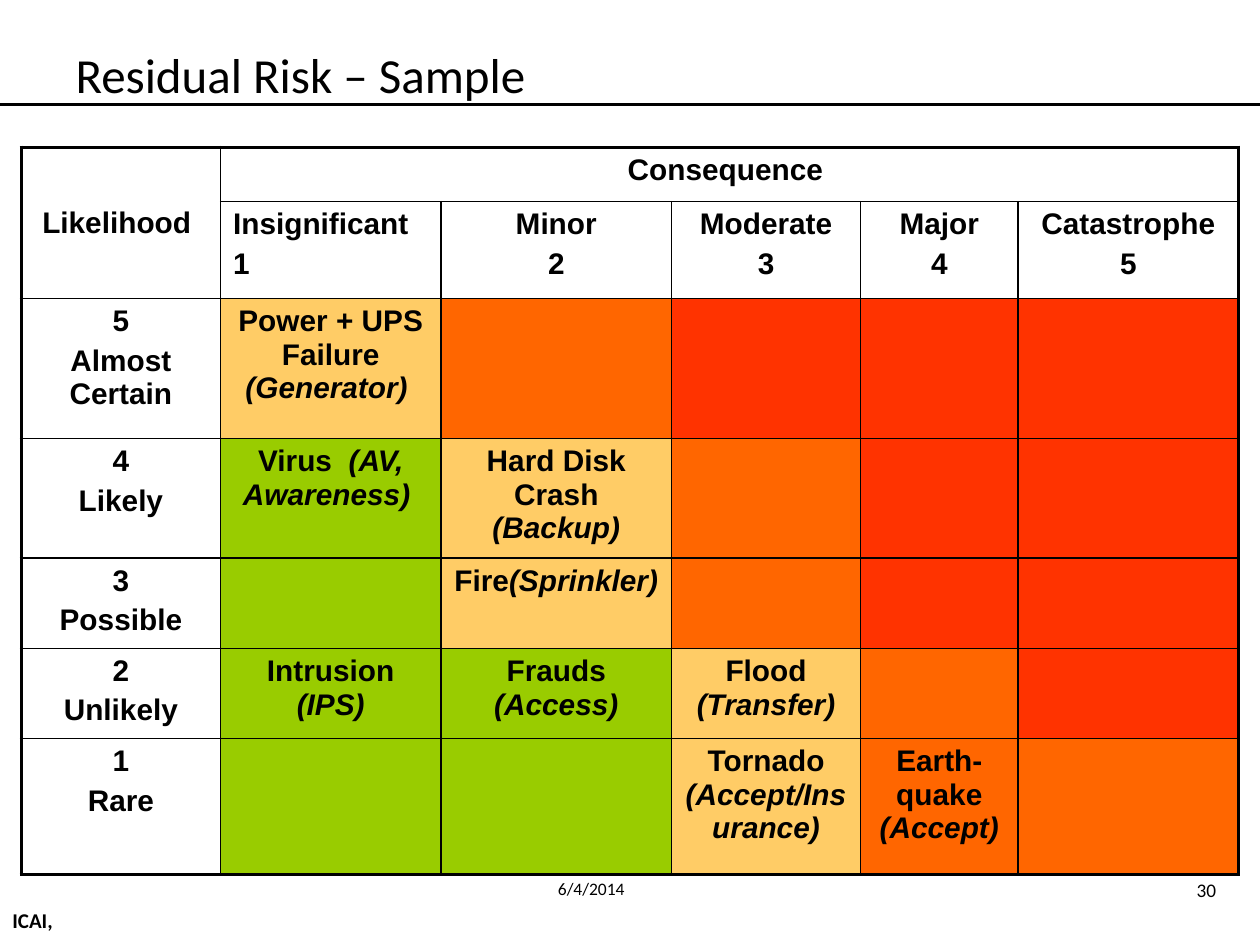
from lxml import etree
from pptx import Presentation
from pptx import util as u
from pptx.dml.color import RGBColor
from pptx.enum import shapes, text
from pptx.oxml import ns

ALIGN = text.PP_ALIGN
ANCHOR = text.MSO_ANCHOR
THEME = {
    "ink": "000000", "low": "99CC00", "medium": "FFCC66", "high": "FF6600", "extreme": "FF3300",
    "heading": "Calibri", "body": "Arial",
    "title": 28, "cell": 17, "number": 11, "date": 10, "footer": 12,
    "rule": 1.5, "inner": 1, "outer": 2.25, "gap": 3.4,
}

TITLE = "Residual Risk – Sample"
CORNER, AXIS = "Likelihood ", "Consequence "
CONSEQUENCES = ["Insignificant", "Minor", "Moderate", "Major", "Catastrophe"]
LIKELIHOODS = ["Almost Certain", "Likely", "Possible", "Unlikely", "Rare"]
LEVELS = ["MHEEE", "LMHEE", "LMHEE", "LLMHE", "LLMHH"]
LEVEL_COLOURS = {"L": "low", "M": "medium", "H": "high", "E": "extreme"}
RISKS = {
    (5, 1): ("Power + UPS Failure ", "(Generator) "),
    (4, 1): ("Virus  ", "(AV, Awareness) "),
    (4, 2): ("Hard Disk Crash ", "(Backup)"),
    (3, 2): ("Fire", "(Sprinkler)"),
    (2, 1): ("Intrusion ", "(IPS)"),
    (2, 2): ("Frauds ", "(Access)"),
    (2, 3): ("Flood ", "(Transfer)"),
    (1, 3): ("Tornado ", "(Accept/Insurance)"),
    (1, 4): ("Earth-quake ", "(Accept)"),
}
COLUMNS = [1.58, 1.75, 1.83, 1.5, 1.25, 1.75]
ROWS = [0.43, 0.77, 1.11, 0.7, 0.43, 0.43, 1.08]
LABELS = [
    ("30", (9, 6.92, 0.75, 0.28), "number", ALIGN.RIGHT, ANCHOR.TOP, False),
    ("ICAI,", (0, 7.1, 4.33, 0.4), "footer", ALIGN.LEFT, ANCHOR.MIDDLE, True),
    ("6/4/2014", (4.33, 6.92, 1.33, 0.33), "date", ALIGN.LEFT, ANCHOR.TOP, False),
]


def colour(name):
    return RGBColor.from_string(THEME[name])


def inches(values):
    return [u.Inches(value) for value in values]


def write(frame, paragraphs, size, font, align=ALIGN.LEFT, bold=False):
    for index, parts in enumerate(paragraphs):
        para = frame.paragraphs[0] if index == 0 else frame.add_paragraph()
        para.alignment = align
        if index:
            para.space_before = u.Pt(THEME["gap"])
        for position, words in enumerate(parts):
            span = para.add_run()
            span.text = words
            style = {"name": THEME[font], "size": u.Pt(THEME[size]), "bold": bold, "italic": position > 0}
            for key, value in style.items():
                setattr(span.font, key, value)
            span.font.color.rgb = colour("ink")


def border(cell, row, column):
    last_row, last_column = row + cell.span_height, column + cell.span_width
    if cell.is_spanned:
        last_row, last_column = row + 1, column + 1
    edges = {"lnL": column == 0, "lnR": last_column == len(COLUMNS),
             "lnT": row == 0, "lnB": last_row == len(ROWS)}
    properties = cell._tc.get_or_add_tcPr()
    for tag, outside in edges.items():
        width = u.Pt(THEME["outer" if outside else "inner"])
        line = etree.SubElement(properties, ns.qn("a:" + tag), w=str(int(width)))
        fill = etree.SubElement(line, ns.qn("a:solidFill"))
        etree.SubElement(fill, ns.qn("a:srgbClr"), val=THEME["ink"])


def cell_content():
    content = {(0, 0): [(CORNER,)], (0, 1): [(AXIS,)]}
    for number, name in enumerate(CONSEQUENCES, 1):
        content[1, number] = [(name,), (str(number),)]
    for index, name in enumerate(LIKELIHOODS):
        content[index + 2, 0] = [(str(5 - index),), (name,)]
    for (likelihood, consequence), parts in RISKS.items():
        content[7 - likelihood, consequence] = [parts]
    return content


def add_matrix(page):
    frame = page.shapes.add_table(len(ROWS), len(COLUMNS),
                                  *inches((0.17, 1.17, sum(COLUMNS), sum(ROWS))))
    table = frame.table
    table.first_row = table.horz_banding = False
    for column, width in zip(table.columns, COLUMNS):
        column.width = u.Inches(width)
    for row, height in zip(table.rows, ROWS):
        row.height = u.Inches(height)
    table.cell(0, 0).merge(table.cell(1, 0))
    table.cell(0, 1).merge(table.cell(0, 5))
    content = cell_content()
    for row in range(len(ROWS)):
        for column in range(len(COLUMNS)):
            cell = table.cell(row, column)
            border(cell, row, column)
            if row > 1 and column > 0:
                cell.fill.solid()
                cell.fill.fore_color.rgb = colour(LEVEL_COLOURS[LEVELS[row - 2][column - 1]])
            else:
                cell.fill.background()
            align = ALIGN.JUSTIFY if (row, column) == (1, 1) else ALIGN.CENTER
            write(cell.text_frame, content.get((row, column), []), "cell", "body", align, True)
    table.cell(0, 0).vertical_anchor = ANCHOR.MIDDLE


def add_rule(page):
    rule = page.shapes.add_connector(shapes.MSO_CONNECTOR.STRAIGHT, *inches((0, 0.83, 10, 0.83)))
    rule.line.color.rgb = colour("ink")
    rule.line.width = u.Pt(THEME["rule"])
    etree.SubElement(rule._element.spPr, ns.qn("a:effectLst"))


def add_title(page):
    title = page.shapes.title
    for key, value in zip(("left", "top", "width", "height"), inches((0.5, 0.25, 9, 0.67))):
        setattr(title, key, value)
    title.text_frame.vertical_anchor = ANCHOR.MIDDLE
    write(title.text_frame, [(TITLE,)], "title", "heading")


def main():
    deck = Presentation()
    deck.slide_width, deck.slide_height = inches((10, 7.5))
    page = deck.slides.add_slide(deck.slide_layouts[5])
    add_rule(page)
    add_title(page)
    for words, place, size, align, anchor, bold in LABELS:
        box = page.shapes.add_textbox(*inches(place))
        box.text_frame.word_wrap = True
        box.text_frame.vertical_anchor = anchor
        write(box.text_frame, [(words,)], size, "heading", align, bold)
    add_matrix(page)
    deck.save("out.pptx")


if __name__ == "__main__":
    main()
